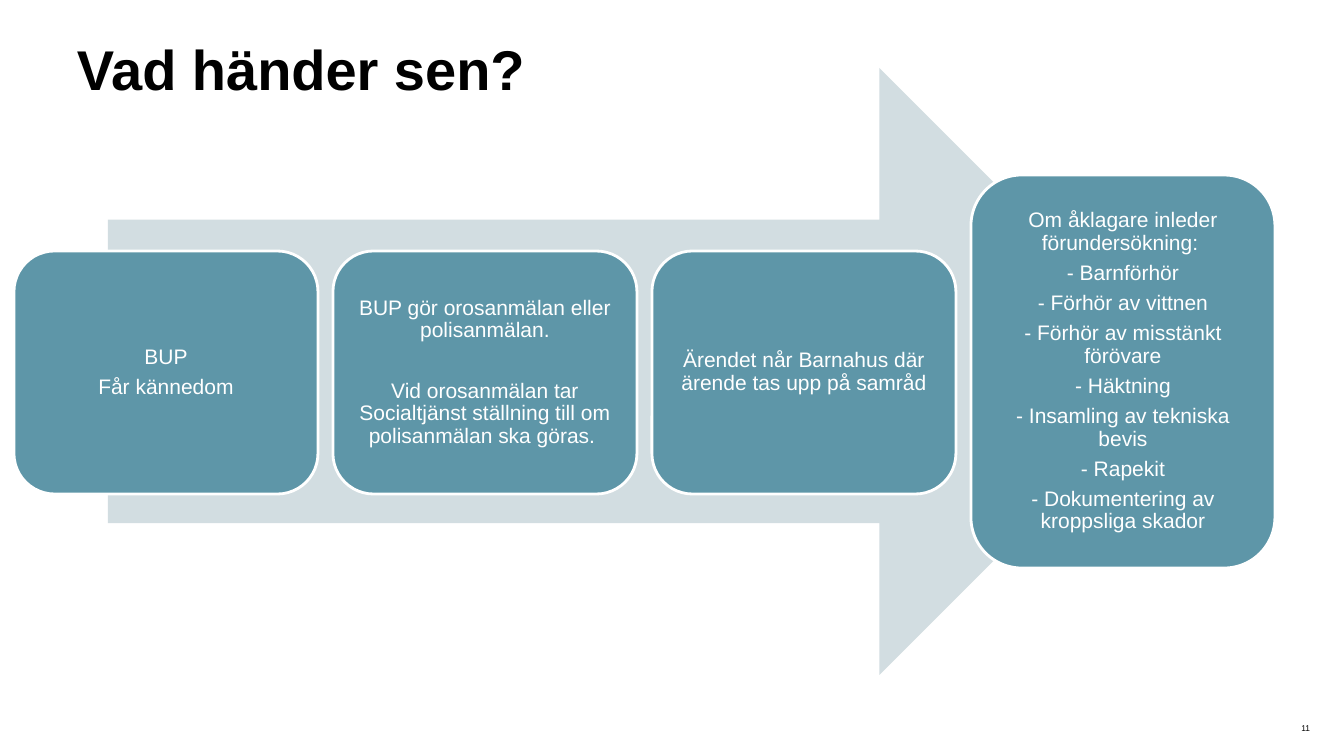
from dataclasses import dataclass

import pptx
import pptx.dml.color
import pptx.enum.shapes
import pptx.enum.text
import pptx.util

EMU_PER_PX = 914400 / 100.8
MSO_SHAPE = pptx.enum.shapes.MSO_SHAPE
PP_ALIGN = pptx.enum.text.PP_ALIGN
MSO_ANCHOR = pptx.enum.text.MSO_ANCHOR


@dataclass(frozen=True)
class Theme:
    font: str = "Arial"
    ink: str = "000000"
    white: str = "FFFFFF"
    arrow: str = "D2DDE1"
    step: str = "5E96A8"
    title_pt: int = 40
    step_pt: int = 15
    number_pt: int = 6
    border_pt: int = 2
    gap_pt: float = 5.25
    wide_gap_pt: float = 26.75


@dataclass(frozen=True)
class Box:
    left: int
    top: int
    width: int
    height: int


@dataclass(frozen=True)
class Step:
    lines: tuple[str, ...]
    top: int = 251
    height: int = 243
    wide_gap: bool = False


THEME = Theme()
STEP_LEFT, STEP_WIDTH, STEP_PITCH, STEP_INSET = 14, 304, 319, 6

STEPS = (
    Step(("BUP", "Får kännedom")),
    Step(
        (
            "BUP gör orosanmälan eller polisanmälan.",
            "Vid orosanmälan tar Socialtjänst ställning till om polisanmälan ska göras. ",
        ),
        wide_gap=True,
    ),
    Step(("Ärendet når Barnahus där ärende tas upp på samråd",)),
    Step(
        (
            "Om åklagare inleder förundersökning: ",
            "- Barnförhör",
            "- Förhör av vittnen",
            "- Förhör av misstänkt förövare",
            "- Häktning",
            "- Insamling av tekniska bevis",
            "- Rapekit",
            "- Dokumentering av kroppsliga skador",
        ),
        top=175,
        height=393,
    ),
)


def px(n: int) -> pptx.util.Emu:
    return pptx.util.Emu(round(n * EMU_PER_PX))


def rgb(color: str) -> pptx.dml.color.RGBColor:
    return pptx.dml.color.RGBColor.from_string(color)


def bounds(box: Box) -> tuple[pptx.util.Emu, ...]:
    return px(box.left), px(box.top), px(box.width), px(box.height)


def set_insets(tf, x: int, y: int) -> None:
    tf.margin_left = tf.margin_right = px(x)
    tf.margin_top = tf.margin_bottom = px(y)


def add_run(p, text: str, size: int, color: str, bold: bool = False) -> None:
    r = p.add_run()
    r.text = text
    r.font.name = THEME.font
    r.font.size = pptx.util.Pt(size)
    r.font.bold = bold
    r.font.color.rgb = rgb(color)


def add_label(slide, box: Box, text: str, size: int, align: PP_ALIGN,
              inset: tuple[int, int], bold: bool = False) -> None:
    tf = slide.shapes.add_textbox(*bounds(box)).text_frame
    tf.word_wrap = True
    set_insets(tf, *inset)
    p = tf.paragraphs[0]
    p.alignment = align
    add_run(p, text, size, THEME.ink, bold)


def add_filled(slide, kind: MSO_SHAPE, box: Box, color: str):
    sp = slide.shapes.add_shape(kind, *bounds(box))
    sp.shadow.inherit = False
    sp.fill.solid()
    sp.fill.fore_color.rgb = rgb(color)
    sp.line.fill.background()
    return sp


def add_step(slide, step: Step, index: int) -> None:
    box = Box(STEP_LEFT + index * STEP_PITCH, step.top, STEP_WIDTH, step.height)
    sp = add_filled(slide, MSO_SHAPE.ROUNDED_RECTANGLE, box, THEME.step)
    sp.line.color.rgb = rgb(THEME.white)
    sp.line.width = pptx.util.Pt(THEME.border_pt)
    tf = sp.text_frame
    tf.word_wrap = True
    tf.vertical_anchor = MSO_ANCHOR.MIDDLE
    set_insets(tf, STEP_INSET, STEP_INSET)
    for i, line in enumerate(step.lines):
        p = tf.add_paragraph() if i else tf.paragraphs[0]
        p.alignment = PP_ALIGN.CENTER
        p.line_spacing = 0.9
        is_wide = step.wide_gap and i == 0
        p.space_after = pptx.util.Pt(THEME.wide_gap_pt if is_wide else THEME.gap_pt)
        add_run(p, line, THEME.step_pt, THEME.white)


def main() -> None:
    prs = pptx.Presentation()
    prs.slide_width, prs.slide_height = px(1344), px(756)
    slide = prs.slides.add_slide(prs.slide_layouts[6])
    add_label(slide, Box(1243, 723, 67, 10), "11", THEME.number_pt, PP_ALIGN.RIGHT, (0, 0))
    add_label(slide, Box(67, 30, 1210, 126), "Vad händer sen?", THEME.title_pt,
              PP_ALIGN.LEFT, (10, 5), bold=True)
    add_filled(slide, MSO_SHAPE.RIGHT_ARROW, Box(108, 68, 1075, 607), THEME.arrow)
    for index, step in enumerate(STEPS):
        add_step(slide, step, index)
    prs.save("out.pptx")


if __name__ == "__main__":
    main()
